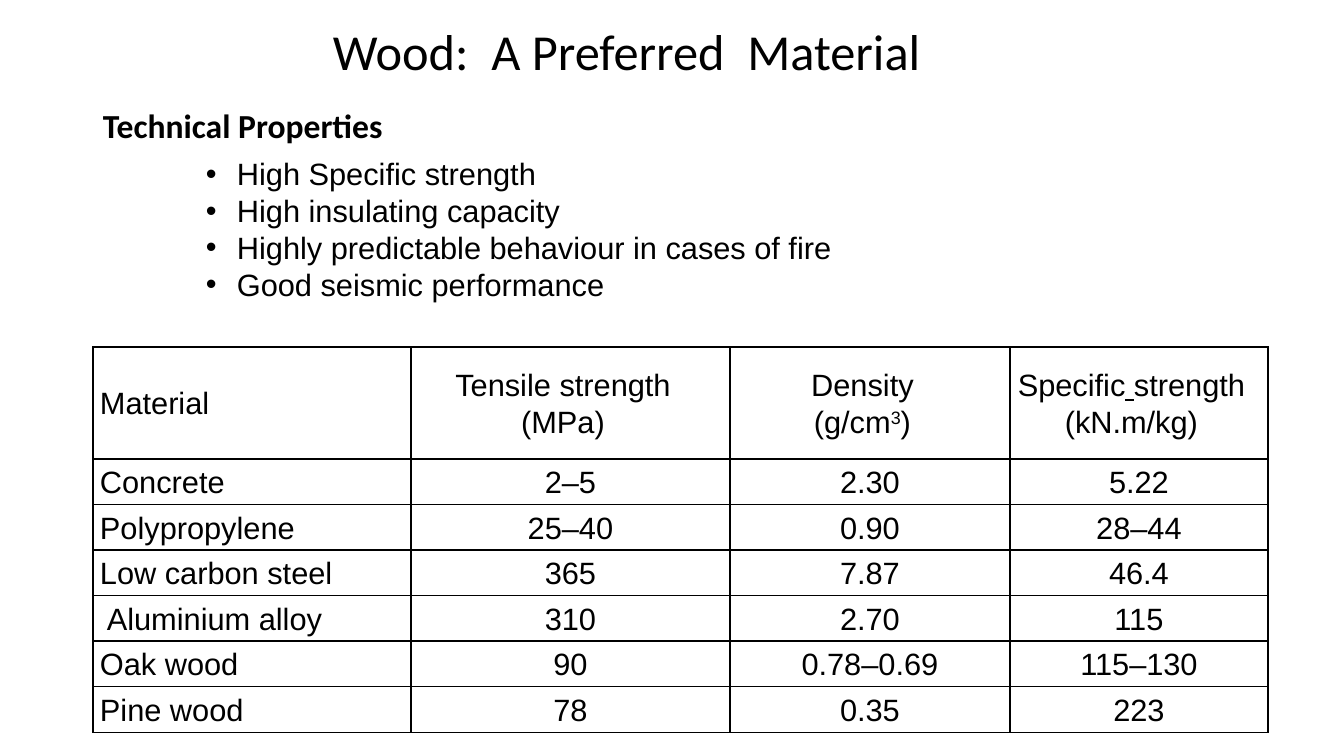
import pptx
import pptx.util
import pptx.dml.color
import pptx.enum.text
import lxml.etree
from dataclasses import dataclass

TITLE = "Wood:  A Preferred  Material"
LABEL = "Technical Properties"
POINTS = [
    "High Specific strength",
    "High insulating capacity",
    "Highly predictable behaviour in cases of fire",
    "Good seismic performance",
]
HEAD = [
    [("Material", "")],
    [("Tensile strength", ""), ("", "break"), ("(MPa)", "")],
    [("Density", ""), ("", "break"), ("(g/cm", ""), ("3", "super"), (")", "")],
    [("Specific", ""), (" ", "under"), ("strength", ""), ("", "break"), ("(kN.m/kg)", "")],
]
ROWS = [
    ("Concrete", "2–5", "2.30", "5.22"),
    ("Polypropylene", "25–40", "0.90", "28–44"),
    ("Low carbon steel", "365", "7.87", "46.4"),
    (" Aluminium alloy", "310", "2.70", "115"),
    ("Oak wood", "90", "0.78–0.69", "115–130"),
    ("Pine wood", "78", "0.35", "223"),
]
COLS = [318, 319, 280, 258]
HEAD_H, ROW_H = 112, 43
LEFT, TOP = 93, 347
INDENT = 31


@dataclass(frozen=True)
class Theme:
    ink: str = "000000"
    head: str = "Calibri"
    body: str = "Arial"
    title: int = 36
    label: int = 24
    text: int = 22
    rule: int = 1


theme = Theme()
Pt = pptx.util.Pt


def px(n):
    return round(n * 914400 / 100.8)


def style(par, face, size, bold=False):
    font = par.font
    font.name, font.size, font.bold = face, Pt(size), bold
    font.color.rgb = pptx.dml.color.RGBColor.from_string(theme.ink)


def add_text(slide, box, lines, face, size, bold=False, wrap=True):
    frame = slide.shapes.add_textbox(*map(px, box)).text_frame
    frame.word_wrap = wrap
    frame.auto_size = pptx.enum.text.MSO_AUTO_SIZE.SHAPE_TO_FIT_TEXT
    frame.text = "\n".join(lines)
    for par in frame.paragraphs:
        style(par, face, size, bold)
    return frame


def add_mark(par):
    props = par._p.get_or_add_pPr()
    props.set("marL", str(px(INDENT)))
    props.set("indent", str(-px(INDENT)))
    font = pptx.oxml.parse_xml(f'<a:buFont {pptx.oxml.ns.nsdecls("a")} typeface="Arial"/>')
    mark = pptx.oxml.parse_xml(f'<a:buChar {pptx.oxml.ns.nsdecls("a")} char="•"/>')
    props.insert(0, font)
    props.insert(1, mark)


def add_rules(cell):
    props = cell._tc.get_or_add_tcPr()
    for i, side in enumerate(("lnL", "lnR", "lnT", "lnB")):
        props.insert(i, pptx.oxml.parse_xml(
            f'<a:{side} {pptx.oxml.ns.nsdecls("a")} w="{Pt(theme.rule)}"><a:solidFill>'
            f'<a:srgbClr val="{theme.ink}"/></a:solidFill></a:{side}>'))


def fill_cell(cell, parts, right, center):
    cell.fill.background()
    add_rules(cell)
    cell.vertical_anchor = pptx.enum.text.MSO_ANCHOR.MIDDLE
    cell.margin_left, cell.margin_right = px(7), px(right)
    cell.margin_top = cell.margin_bottom = px(3)
    par = cell.text_frame.paragraphs[0]
    style(par, theme.body, theme.text)
    par.line_spacing, par.space_after = 1.07, Pt(8)
    if center:
        par.alignment = pptx.enum.text.PP_ALIGN.CENTER
    for text, kind in parts:
        if kind == "break":
            par.add_line_break()
            continue
        run = par.add_run()
        run.text = text
        if kind == "super":
            run._r.get_or_add_rPr().set("baseline", "30000")
        elif kind == "under":
            run.font.underline = True


def add_grid(slide):
    tall = [HEAD_H] + [ROW_H] * len(ROWS)
    box = LEFT, TOP, sum(COLS), sum(tall)
    grid = slide.shapes.add_table(len(tall), len(COLS), *map(px, box)).table
    grid.first_row = grid.horz_banding = False
    for col, wide in zip(grid.columns, COLS):
        col.width = px(wide)
    data = [HEAD] + [[[(text, "")] for text in row] for row in ROWS]
    for r, row in enumerate(data):
        grid.rows[r].height = px(tall[r])
        for c, parts in enumerate(row):
            fill_cell(grid.cell(r, c), parts, 7 if r else 22, c > 0)


def main():
    deck = pptx.Presentation()
    deck.slide_width, deck.slide_height = px(1344), px(756)
    slide = deck.slides.add_slide(deck.slide_layouts[6])
    points = add_text(slide, (196, 150, 672, 159), POINTS, theme.body, theme.text)
    for par in points.paragraphs:
        add_mark(par)
    add_grid(slide)
    add_text(slide, (93, 100, 301, 50), [LABEL], theme.head, theme.label, bold=True)
    add_text(slide, (323, 15, 625, 72), [TITLE], theme.head, theme.title, wrap=False)
    deck.save("out.pptx")


if __name__ == "__main__":
    main()
